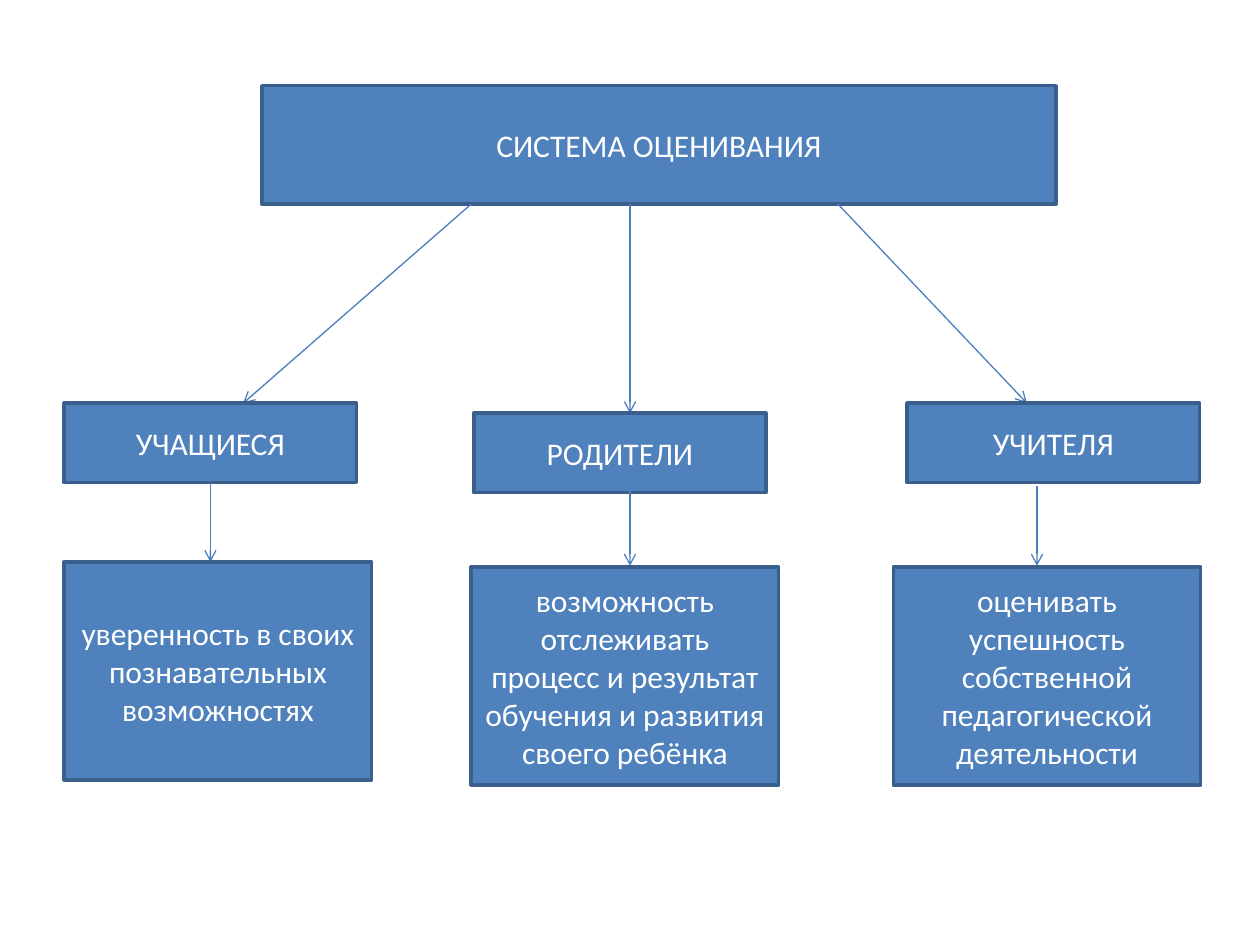
from dataclasses import dataclass

from lxml.etree import SubElement
from pptx import Presentation
from pptx.dml.color import RGBColor
from pptx.enum.shapes import MSO_CONNECTOR, MSO_SHAPE
from pptx.enum.text import MSO_ANCHOR, MSO_AUTO_SIZE, PP_ALIGN
from pptx.oxml.ns import qn
from pptx.shapes.autoshape import Shape
from pptx.slide import Slide
from pptx.util import Inches, Pt

COLORS = {"fill": "4F81BD", "border": "3A5F8C", "arrow": "4B7EBC", "text": "FFFFFF"}
ROLE_SIZE = (2.32, 0.63)
BENEFIT_SIZE = (2.44, 1.73)
SYSTEM_BOTTOM = 1.62


@dataclass(frozen=True)
class Box:
    text: str
    left: float
    top: float
    width: float
    height: float


@dataclass(frozen=True)
class Arrow:
    start: tuple[float, float]
    end: tuple[float, float]


@dataclass(frozen=True)
class Branch:
    role: Box
    benefit: Box
    from_system: Arrow
    to_benefit: Arrow


SYSTEM = Box("СИСТЕМА ОЦЕНИВАНИЯ", 2.08, 0.68, 6.3, 0.94)
BRANCHES = [
    Branch(
        Box("УЧАЩИЕСЯ", 0.51, 3.2, *ROLE_SIZE),
        Box("уверенность в своих познавательных возможностях", 0.51, 4.46, *BENEFIT_SIZE),
        Arrow((3.74, SYSTEM_BOTTOM), (1.93, 3.2)),
        Arrow((1.67, 3.83), (1.67, 4.46)),
    ),
    Branch(
        Box("РОДИТЕЛИ", 3.76, 3.28, *ROLE_SIZE),
        Box(
            "возможность отслеживать процесс и результат обучения и развития своего ребёнка",
            3.74, 4.5, *BENEFIT_SIZE,
        ),
        Arrow((5, SYSTEM_BOTTOM), (5, 3.28)),
        Arrow((5, 3.86), (5, 4.49)),
    ),
    Branch(
        Box("УЧИТЕЛЯ", 7.2, 3.2, *ROLE_SIZE),
        Box(
            "оценивать успешность собственной педагогической деятельности",
            7.09, 4.5, *BENEFIT_SIZE,
        ),
        Arrow((6.65, SYSTEM_BOTTOM), (8.15, 3.2)),
        Arrow((8.23, 3.86), (8.23, 4.49)),
    ),
]


def color(name: str) -> RGBColor:
    """Return the named palette colour."""
    return RGBColor.from_string(COLORS[name])


def format_box(shape: Shape, box: Box) -> None:
    """Place a shape, style it and write its text."""
    shape.left, shape.top = Inches(box.left), Inches(box.top)
    shape.width, shape.height = Inches(box.width), Inches(box.height)
    shape.fill.solid()
    shape.fill.fore_color.rgb = color("fill")
    shape.line.color.rgb = color("border")
    shape.line.width = Pt(2)
    frame = shape.text_frame
    frame.word_wrap = True
    frame.auto_size = MSO_AUTO_SIZE.NONE
    frame.vertical_anchor = MSO_ANCHOR.MIDDLE
    paragraph = frame.paragraphs[0]
    paragraph.alignment = PP_ALIGN.CENTER
    run = paragraph.add_run()
    run.text = box.text
    run.font.name = "Calibri"
    run.font.size = Pt(18)
    run.font.color.rgb = color("text")


def add_box(slide: Slide, box: Box) -> None:
    """Add a filled rectangle with centred text."""
    bounds = map(Inches, (box.left, box.top, box.width, box.height))
    shape = slide.shapes.add_shape(MSO_SHAPE.RECTANGLE, *bounds)
    shape.shadow.inherit = False
    format_box(shape, box)


def add_arrow(slide: Slide, arrow: Arrow) -> None:
    """Add a thin straight line with an open head at its end."""
    ends = map(Inches, (*arrow.start, *arrow.end))
    connector = slide.shapes.add_connector(MSO_CONNECTOR.STRAIGHT, *ends)
    connector.line.color.rgb = color("arrow")
    connector.line.width = Pt(0.75)
    SubElement(connector.line._get_or_add_ln(), qn("a:tailEnd"), type="arrow")
    SubElement(connector._element.spPr, qn("a:effectLst"))


def main() -> None:
    """Build the diagram and save it."""
    presentation = Presentation()
    presentation.slide_width, presentation.slide_height = Inches(10), Inches(7.5)
    slide = presentation.slides.add_slide(presentation.slide_layouts[5])
    format_box(slide.shapes.title, SYSTEM)
    for branch in BRANCHES:
        add_arrow(slide, branch.from_system)
        add_box(slide, branch.role)
        add_arrow(slide, branch.to_benefit)
        add_box(slide, branch.benefit)
    presentation.save("out.pptx")


if __name__ == "__main__":
    main()
